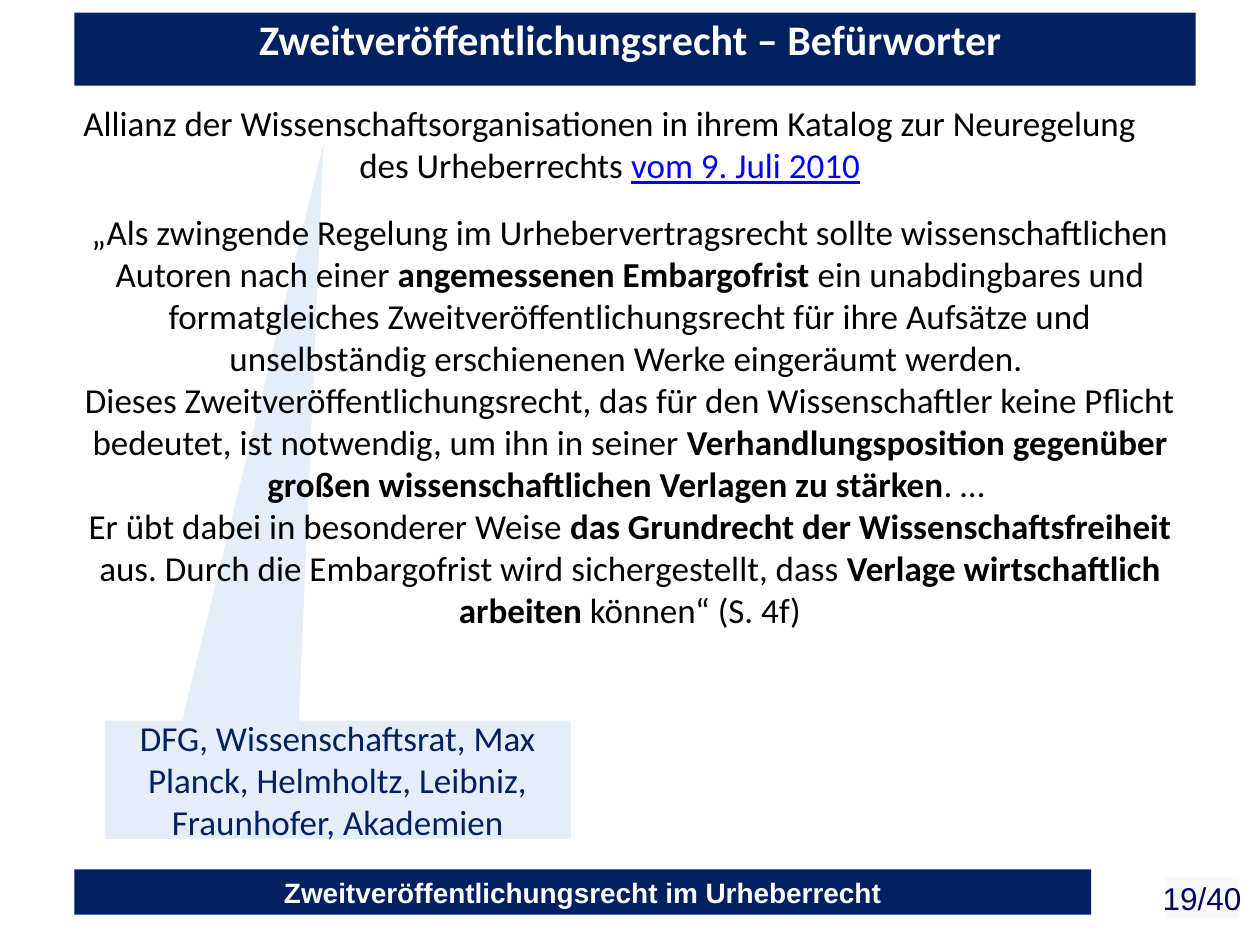
from lxml.etree import SubElement
from pptx import Presentation
from pptx.dml.color import RGBColor
from pptx.enum.shapes import MSO_SHAPE as Preset
from pptx.enum.text import MSO_ANCHOR as Anchor, MSO_AUTO_SIZE as AutoSize, PP_ALIGN as Align
from pptx.oxml.ns import qn
from pptx.util import Inches, Pt

COLUMNS, ROWS = 100, 75
WIDTH, HEIGHT = Inches(10), Inches(7.5)
NAVY = "002060"
BODY = {"name": "Calibri", "size": Pt(20)}
BOLD = {"bold": True}
LINK = {"underline": True}


def color(hex_value):
    return RGBColor.from_string(hex_value)


def place(column, row, columns, rows):
    return [round(WIDTH * column / COLUMNS), round(HEIGHT * row / ROWS),
            round(WIDTH * columns / COLUMNS), round(HEIGHT * rows / ROWS)]


def write(shape, paragraphs, font, font_color, line_spacing=None, **frame_format):
    frame = shape.text_frame
    for name, value in {"word_wrap": True, **frame_format}.items():
        setattr(frame, name, value)
    for index, runs in enumerate(paragraphs):
        paragraph = frame.paragraphs[0] if index == 0 else frame.add_paragraph()
        paragraph.alignment = Align.CENTER
        paragraph.line_spacing = line_spacing
        for text, changes, run_color in runs:
            run = paragraph.add_run()
            run.text = text
            run.font.color.rgb = color(run_color or font_color)
            for name, value in {**font, **changes}.items():
                setattr(run.font, name, value)


def add_panel(slide, area, fill, text, font, font_color, preset=Preset.RECTANGLE, **text_format):
    shape = slide.shapes.add_shape(preset, *place(*area))
    shape.shadow.inherit = False
    shape.fill.solid()
    shape.fill.fore_color.rgb = color(fill)
    shape.line.fill.background()
    write(shape, [[plain(text)]], font, font_color, **text_format)
    return shape


def add_text(slide, area, paragraphs):
    box = slide.shapes.add_textbox(*place(*area))
    write(box, paragraphs, BODY, "000000", auto_size=AutoSize.SHAPE_TO_FIT_TEXT)


def add_callout(slide, area, fill, opacity, tip, text):
    callout = add_panel(slide, area, fill, text, BODY, NAVY,
                        preset=Preset.RECTANGULAR_CALLOUT, vertical_anchor=Anchor.MIDDLE)
    for index, offset in enumerate(tip):
        callout.adjustments[index] = offset
    fill_color = callout.fill._xPr.find(".//" + qn("a:srgbClr"))
    SubElement(fill_color, qn("a:alpha"), val=str(opacity * 1000))


def plain(text):
    return text, {}, None


def bold(text):
    return text, BOLD, None


def main():
    presentation = Presentation()
    presentation.slide_width, presentation.slide_height = WIDTH, HEIGHT
    slide = presentation.slides.add_slide(presentation.slide_layouts[6])

    add_panel(slide, (5.9, 69, 80.7, 3.6), NAVY, "Zweitveröffentlichungsrecht im Urheberrecht",
              {"name": "Arial", "size": Pt(16), **BOLD}, "FFFFFF", vertical_anchor=Anchor.MIDDLE,
              margin_left=0, margin_right=0, margin_top=0, margin_bottom=0)
    add_panel(slide, (92.5, 69.6, 5.8, 3.3), "F9F9F9", "19/40",
              {"name": "Arial", "size": Pt(18)}, "000066",
              vertical_anchor=Anchor.MIDDLE, word_wrap=False)
    add_panel(slide, (5.9, 1, 89, 5.8), NAVY, "Zweitveröffentlichungsrecht – Befürworter ",
              {"name": "Calibri", "size": Pt(24), **BOLD}, "FFFFFF",
              vertical_anchor=Anchor.TOP, line_spacing=0.9)

    add_text(slide, (5.1, 7.6, 86.6, 7.7), [[
        plain("Allianz der Wissenschaftsorganisationen in ihrem Katalog zur Neuregelung "
              "des Urheberrechts "),
        ("vom 9. Juli 2010", LINK, "0000FF"),
    ]])
    add_callout(slide, (8.3, 57.2, 37, 9.4), "C6D9F1", 46, (-0.03, -5.38),
                "DFG, Wissenschaftsrat, Max Planck, Helmholtz, Leibniz, Fraunhofer, Akademien")
    add_text(slide, (5.1, 16.2, 89.8, 38), [
        [plain("„Als zwingende Regelung im Urhebervertragsrecht sollte wissenschaftlichen "
               "Autoren nach einer "),
         bold("angemessenen Embargofrist "),
         plain("ein unabdingbares und formatgleiches Zweitveröffentlichungsrecht für ihre "
               "Aufsätze und unselbständig erschienenen Werke eingeräumt werden. ")],
        [plain("Dieses Zweitveröffentlichungsrecht, das für den Wissenschaftler keine Pflicht "
               "bedeutet, ist notwendig, um ihn in seiner "),
         bold("Verhandlungsposition gegenüber großen wissenschaftlichen Verlagen zu stärken"),
         plain(". … ")],
        [plain("Er übt dabei in besonderer Weise "),
         bold("das Grundrecht der Wissenschaftsfreiheit "),
         plain("aus. Durch die Embargofrist wird sichergestellt, dass "),
         bold("Verlage wirtschaftlich arbeiten "),
         plain("können“ (S. 4f)")],
    ])
    presentation.save("out.pptx")


if __name__ == "__main__":
    main()
